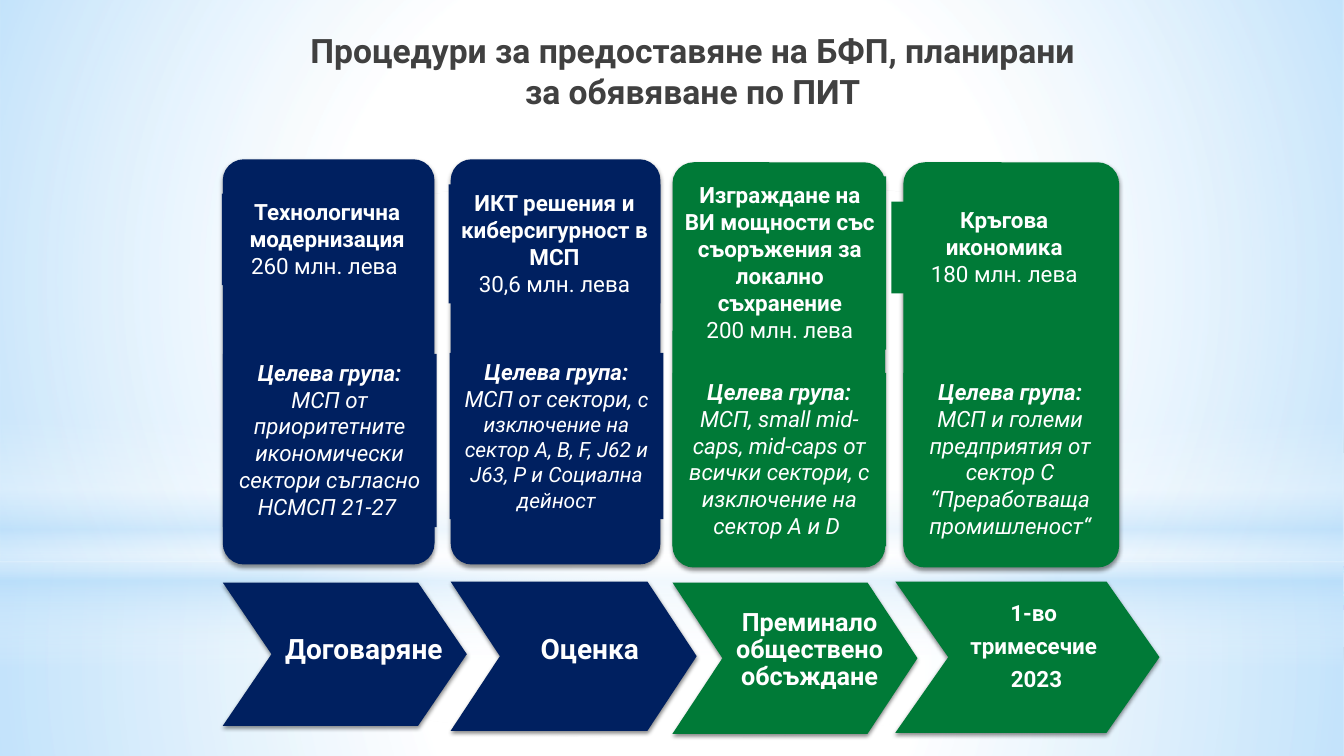
from dataclasses import dataclass

from lxml.etree import SubElement, Element
from pptx import Presentation
from pptx.dml.color import RGBColor
from pptx.enum.shapes import MSO_SHAPE as Shape
from pptx.enum.text import MSO_ANCHOR as Anchor, MSO_AUTO_SIZE as Fit, PP_ALIGN as Align
from pptx.oxml.ns import qn
from pptx.util import Pt

PX = 9144  # 100 px to the inch
FONT = "Roboto"
NAVY, GREEN, WHITE, GREY = "002060", "007A37", "FFFFFF", "404040"
SKY = "B4DCFA"

Box = tuple[int, int, int, int]  # left, top, width, height
Stop = tuple[int, str, int]  # place %, colour, opacity %


@dataclass
class Run:
    text: str
    bold: bool = False
    size: float = 16


@dataclass
class Glow:
    box: Box
    stops: list[Stop]
    kind: Shape = Shape.RECTANGLE
    round: bool = True


@dataclass
class Step:
    hue: str
    card: Box
    head: Box
    name: str
    sum: str
    goal: Box
    group: list[Run]
    arrow: Box
    notch: float
    label: Box
    stage: list[str]
    size: int


GLOWS = [
    Glow((0, 558, 1333, 192), [(0, WHITE, 91), (37, WHITE, 76), (100, SKY, 79)]),
    Glow((0, 0, 1333, 558), [(0, WHITE, 89), (48, WHITE, 62), (100, SKY, 79)]),
    Glow((0, 412, 1333, 250),
         [(0, WHITE, 0), (29, WHITE, 30), (45, SKY, 40),
          (55, WHITE, 26), (65, SKY, 60), (100, WHITE, 0)], round=False),
    Glow((0, 175, 1333, 558), [(0, WHITE, 100), (56, WHITE, 0)], Shape.OVAL),
]

STEPS = [
    Step(NAVY, (221, 158, 210, 402), (220, 192, 209, 91),
         "Технологична модернизация", "260 млн. лева ",
         (221, 351, 212, 172),
         [Run("МСП от приоритетните икономически сектори съгласно НСМСП 21-27 ")],
         (221, 578, 242, 142), 0.34, (268, 625, 186, 40), ["Договаряне"], 20),
    Step(NAVY, (447, 158, 208, 402), (445, 183, 210, 118),
         "ИКТ решения и киберсигурност в МСП", "30,6 млн. лева",
         (446, 350, 212, 165),
         [Run("МСП от сектори, "),
          Run("с изключение на сектор А, В, F, J62 и J63, P и Социална дейност", size=15)],
         (447, 577, 244, 148), 0.33, (506, 625, 158, 40), ["Оценка"], 20),
    Step(GREEN, (667, 161, 211, 402), (668, 175, 211, 172),
         "Изграждане на ВИ мощности със съоръжения за локално съхранение",
         "200 млн. лева",
         (667, 370, 212, 172),
         [Run("МСП, small mid-caps, mid-caps от всички сектори, "
              "с изключение на сектор А и D ")],
         (667, 578, 243, 150), 0.33, (710, 600, 186, 133),
         ["Преминало обществено обсъждане"], 18),
    Step(GREEN, (896, 161, 214, 402), (884, 200, 224, 91),
         "Кръгова икономика", "180 млн. лева",
         (896, 370, 212, 172),
         [Run("МСП и големи предприятия от сектор C “Преработваща промишленост“")],
         (888, 577, 262, 150), 0.35, (949, 593, 158, 146),
         ["1-во ", "тримесечие ", "2023"], 16),
]


def rgb(hue: str) -> RGBColor:
    return RGBColor.from_string(hue)


def emu(box: Box) -> list[int]:
    return [n * PX for n in box]


def add(kind: Shape, box: Box, hue: str = ""):
    shape = slide.shapes.add_shape(kind, *emu(box))
    shape.shadow.inherit = False
    shape.line.fill.background()
    if hue:
        shape.fill.solid()
        shape.fill.fore_color.rgb = rgb(hue)
    return shape


def tint(node, hue: str, part: int) -> None:
    clr = SubElement(node, qn("a:srgbClr"), val=hue)
    SubElement(clr, qn("a:alpha"), val=str(part * 1000))


def blend(glow: Glow):
    shape = add(glow.kind, glow.box)
    grad = Element(qn("a:gradFill"), rotWithShape="1")
    stops = SubElement(grad, qn("a:gsLst"))
    for place, hue, part in glow.stops:
        tint(SubElement(stops, qn("a:gs"), pos=str(place * 1000)), hue, part)
    if glow.round:
        path = SubElement(grad, qn("a:path"), path="circle")
        SubElement(path, qn("a:fillToRect"), l="50000", t="50000", r="50000", b="50000")
    else:
        SubElement(grad, qn("a:lin"), ang="5400000", scaled="0")
    shape.element.spPr.find(qn("a:prstGeom")).addnext(grad)
    return shape


def shade(shape) -> None:
    effects = shape.element.spPr.find(qn("a:effectLst"))
    drop = SubElement(effects, qn("a:outerShdw"), blurRad=str(Pt(3.1)), dist=str(Pt(1.8)),
                      dir="5400000", rotWithShape="0")
    tint(drop, "000000", 45)


def write(shape, paras: list[list[Run]], hue: str = WHITE, italic: bool = False,
          gap: float = 0, lead: float = 1.0) -> None:
    frame = shape.text_frame
    frame.word_wrap = True
    frame.auto_size = Fit.NONE
    frame.vertical_anchor = Anchor.TOP
    for i, runs in enumerate(paras):
        para = frame.add_paragraph() if i else frame.paragraphs[0]
        para.alignment = Align.CENTER
        para.line_spacing = lead
        para.space_before, para.space_after = Pt(0), Pt(gap)
        for run in runs:
            part = para.add_run()
            part.text = run.text
            font = part.font
            font.name, font.size = FONT, Pt(run.size)
            font.bold, font.italic = run.bold, italic
            font.color.rgb = rgb(hue)


def draw(step: Step) -> None:
    # Card with its name, budget and target group
    card = add(Shape.ROUNDED_RECTANGLE, step.card, step.hue)
    card.adjustments[0] = 0.1
    shade(card)
    head = add(Shape.RECTANGLE, step.head, step.hue)
    write(head, [[Run(step.name, True)], [Run(step.sum)]])
    goal = add(Shape.RECTANGLE, step.goal, step.hue)
    write(goal, [[Run("Целева група:", True)], step.group], italic=True)

    # Arrow with its stage
    arrow = add(Shape.CHEVRON, step.arrow, step.hue)
    arrow.adjustments[0] = step.notch
    shade(arrow)
    label = slide.shapes.add_textbox(*emu(step.label))
    write(label, [[Run(line, True, step.size)] for line in step.stage], gap=6, lead=0.9)


deck = Presentation()
deck.slide_width, deck.slide_height = 1333 * PX, 750 * PX
slide = deck.slides.add_slide(deck.slide_layouts[5])

# Backdrop, kept behind the title
title = slide.shapes.title
for glow in GLOWS:
    blend(glow).element.addnext(title.element)

# Title
title.left, title.top, title.width, title.height = emu((283, 25, 808, 70))
write(title, [[Run("Процедури за предоставяне на БФП, планирани за обявяване по ПИТ", True, 24)]],
      hue=GREY)

# Columns
for step in STEPS:
    draw(step)

deck.save("out.pptx")
